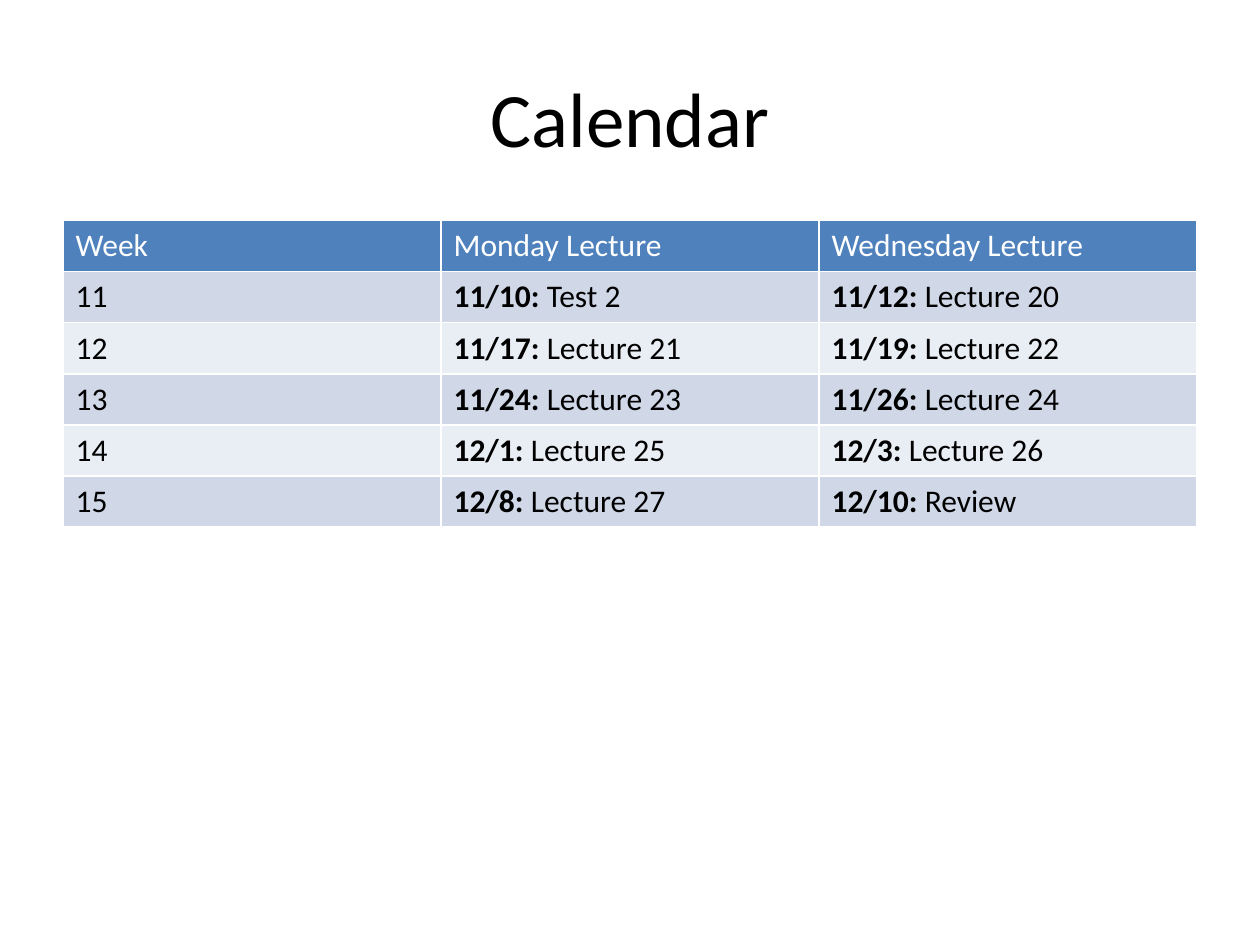
from dataclasses import dataclass

from lxml import etree
from pptx import Presentation
from pptx.dml.color import RGBColor
from pptx.enum.text import MSO_ANCHOR, PP_ALIGN
from pptx.oxml.ns import qn
from pptx.util import Inches, Pt

MIDDLE = MSO_ANCHOR.MIDDLE
CENTER = PP_ALIGN.CENTER
TITLE_ONLY = 5


@dataclass(frozen=True)
class Theme:
    font: str = "Calibri"
    title_size: int = 44
    table_size: int = 18
    ink: str = "000000"
    paper: str = "FFFFFF"
    header: str = "4F81BD"
    bands: tuple[str, str] = ("D0D8E8", "E9EDF4")
    rule_width: int = 1


@dataclass(frozen=True)
class Session:
    date: str
    topic: str


@dataclass(frozen=True)
class Week:
    number: int
    monday: Session
    wednesday: Session


THEME = Theme()
SLIDE_WIDTH, SLIDE_HEIGHT = Inches(10), Inches(7.5)
MARGIN = int(SLIDE_WIDTH * 0.05)
CONTENT_WIDTH = SLIDE_WIDTH - 2 * MARGIN
TITLE_TOP, TITLE_HEIGHT = int(SLIDE_HEIGHT * 0.04), Inches(1.25)
TABLE_TOP, ROW_HEIGHT = Inches(1.75), Inches(0.405)

HEADINGS = ("Week", "Monday Lecture", "Wednesday Lecture")
WEEKS = (
    Week(11, Session("11/10", "Test 2"), Session("11/12", "Lecture 20")),
    Week(12, Session("11/17", "Lecture 21"), Session("11/19", "Lecture 22")),
    Week(13, Session("11/24", "Lecture 23"), Session("11/26", "Lecture 24")),
    Week(14, Session("12/1", "Lecture 25"), Session("12/3", "Lecture 26")),
    Week(15, Session("12/8", "Lecture 27"), Session("12/10", "Review")),
)


def add_run(paragraph, text: str, size: int, color: str, bold: bool = False) -> None:
    run = paragraph.add_run()
    run.text = text
    formats = {"name": THEME.font, "size": Pt(size), "bold": bold}
    for attribute, value in formats.items():
        setattr(run.font, attribute, value)
    run.font.color.rgb = RGBColor.from_string(color)


def add_borders(cell) -> None:
    properties = cell._tc.get_or_add_tcPr()
    for side in ("a:lnL", "a:lnR", "a:lnT", "a:lnB"):
        line = etree.SubElement(properties, qn(side), w=str(Pt(THEME.rule_width)))
        fill = etree.SubElement(line, qn("a:solidFill"))
        etree.SubElement(fill, qn("a:srgbClr"), val=THEME.paper)


def fill_cell(cell, content: str | Session, background: str, color: str) -> None:
    add_borders(cell)
    cell.fill.solid()
    cell.fill.fore_color.rgb = RGBColor.from_string(background)
    paragraph = cell.text_frame.paragraphs[0]
    if isinstance(content, Session):
        add_run(paragraph, f"{content.date}:", THEME.table_size, color, bold=True)
        add_run(paragraph, f" {content.topic}", THEME.table_size, color)
    else:
        add_run(paragraph, content, THEME.table_size, color)


def add_title(slide, text: str) -> None:
    title = slide.shapes.title
    place = {"left": MARGIN, "top": TITLE_TOP,
             "width": CONTENT_WIDTH, "height": TITLE_HEIGHT}
    for attribute, value in place.items():
        setattr(title, attribute, value)
    title.text_frame.vertical_anchor = MIDDLE
    paragraph = title.text_frame.paragraphs[0]
    paragraph.alignment = CENTER
    add_run(paragraph, text, THEME.title_size, THEME.ink)


def add_calendar(slide, weeks: tuple[Week, ...]) -> None:
    row_count = len(weeks) + 1
    table = slide.shapes.add_table(
        row_count, len(HEADINGS), MARGIN, TABLE_TOP,
        CONTENT_WIDTH, ROW_HEIGHT * row_count).table
    for column, heading in enumerate(HEADINGS):
        fill_cell(table.cell(0, column), heading, THEME.header, THEME.paper)
    for index, week in enumerate(weeks):
        band = THEME.bands[index % len(THEME.bands)]
        contents = (str(week.number), week.monday, week.wednesday)
        for column, content in enumerate(contents):
            fill_cell(table.cell(index + 1, column), content, band, THEME.ink)


def main() -> None:
    presentation = Presentation()
    presentation.slide_width, presentation.slide_height = SLIDE_WIDTH, SLIDE_HEIGHT
    slide = presentation.slides.add_slide(presentation.slide_layouts[TITLE_ONLY])
    add_title(slide, "Calendar")
    add_calendar(slide, WEEKS)
    presentation.save("out.pptx")


if __name__ == "__main__":
    main()
